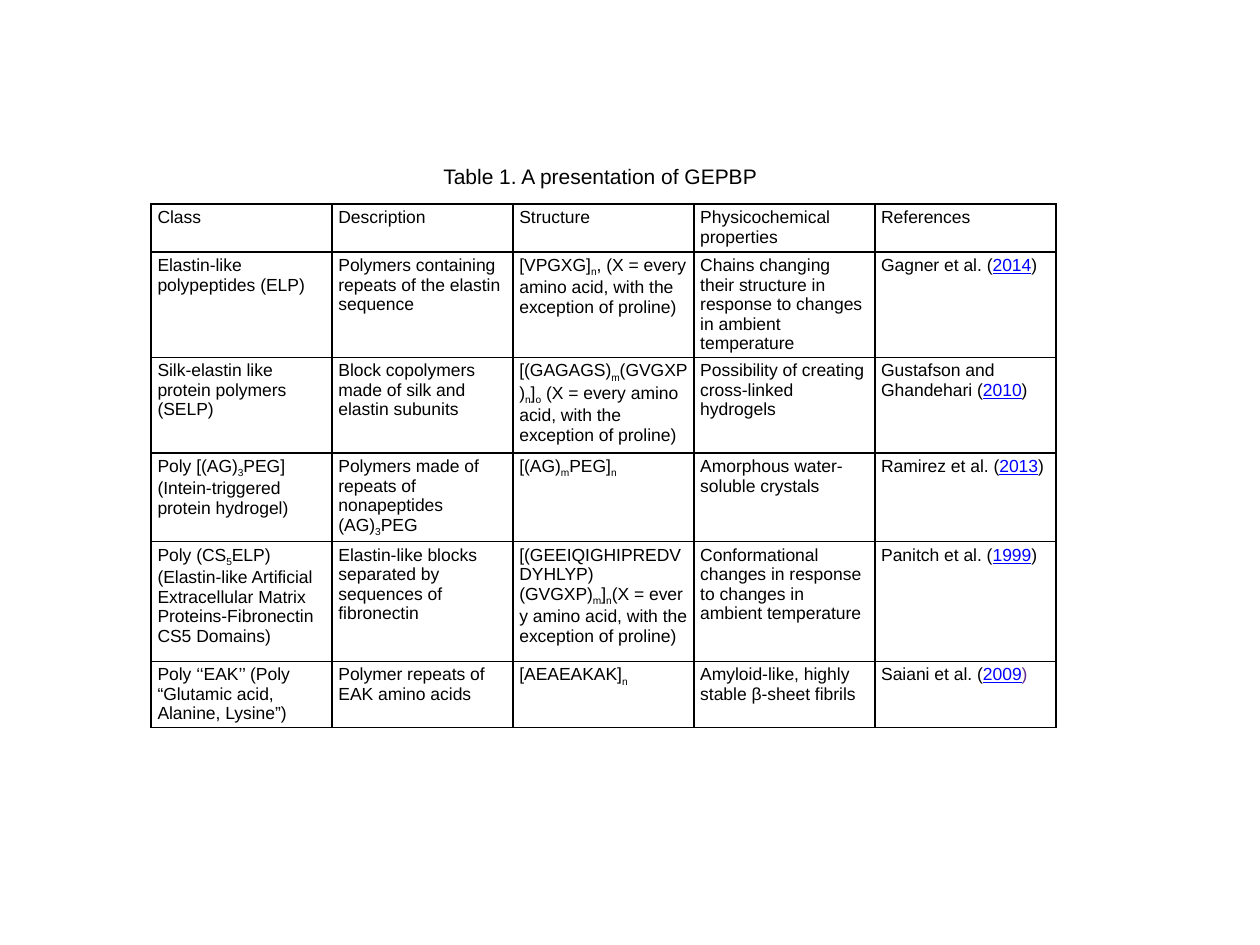
from lxml import etree
from pptx import Presentation
from pptx.dml.color import RGBColor
from pptx.enum.text import MSO_AUTO_SIZE
from pptx.oxml.ns import qn
from pptx.util import Inches, Pt

FIT_SHAPE = MSO_AUTO_SIZE.SHAPE_TO_FIT_TEXT
COLORS = {"text": "000000", "paper": "FFFFFF", "link": "0000FF", "visited": "642A8F"}
BLANK_LAYOUT = 6
BORDER_TAGS = ("a:lnL", "a:lnR", "a:lnT", "a:lnB")
CELL_FORMAT = {
    "margin_left": Inches(0.05),
    "margin_right": Inches(0.05),
    "margin_top": Inches(0.03),
    "margin_bottom": Inches(0.03),
}

# Pieces of a text are divided by "|"; the first character of a piece may set its style.
MARKS = {
    "~": {"subscript": True},
    "_": {"color": "link", "underline": True},
    "^": {"color": "visited"},
}

NBSP = chr(160)
ANY_ACID = f"(X{NBSP}={NBSP}every amino acid, with the exception of proline)"
ROW_HEIGHTS = [0.38, 0.74, 0.76, 0.63, 0.95, 0.4]
POLYMERS = [
    ["Class", "Description", "Structure", "Physicochemical properties", "References"],
    [
        "Elastin-like polypeptides (ELP)",
        "Polymers containing repeats of the elastin sequence",
        f"[VPGXG]|~n|, {ANY_ACID}",
        "Chains changing their structure in response to changes in ambient temperature",
        "Gagner et al. (|_2014|)",
    ],
    [
        "Silk-elastin like protein polymers (SELP)",
        "Block copolymers made of silk and elastin subunits",
        f"[(GAGAGS)|~m|(GVGXP)|~n|]|~o|{NBSP}{ANY_ACID}",
        "Possibility of creating cross-linked hydrogels",
        "Gustafson and Ghandehari (|_2010|)",
    ],
    [
        "Poly [(AG)|~3|PEG] (Intein-triggered protein hydrogel)",
        "Polymers made of repeats of nonapeptides (AG)|~3|PEG",
        "[(AG)|~m|PEG]|~n",
        "Amorphous water-soluble crystals",
        "Ramirez et al. (|_2013|)",
    ],
    [
        "Poly (CS|~5|ELP) (Elastin-like Artificial Extracellular Matrix "
        "Proteins-Fibronectin CS5 Domains)",
        "Elastin-like blocks separated by sequences of fibronectin",
        f"[(GEEIQIGHIPREDVDYHLYP)(GVGXP)|~m|]|~n|{ANY_ACID}",
        "Conformational changes in response to changes in ambient temperature",
        "Panitch et al. (|_1999|)",
    ],
    [
        "Poly ‘‘EAK’’ (Poly “Glutamic acid, Alanine, Lysine”)",
        "Polymer repeats of EAK amino acids",
        "[AEAEAKAK]|~n",
        "Amyloid-like, highly stable β-sheet fibrils",
        f"Saiani et al.{NBSP}(|_2009|^)",
    ],
]


class SlideBuilder:
    def __init__(self, slide, font_name="Arial"):
        self.slide = slide
        self.font_name = font_name

    def add_runs(self, paragraph, text, size):
        """Add the runs of a text, styled by the marks in it."""
        for piece in text.split("|"):
            style = MARKS.get(piece[0], {})
            run = paragraph.add_run()
            run.text = piece[1:] if style else piece
            font_format = {
                "name": self.font_name,
                "size": Pt(size),
                "underline": style.get("underline"),
            }
            for name, value in font_format.items():
                setattr(run.font, name, value)
            run.font.color.rgb = RGBColor.from_string(COLORS[style.get("color", "text")])
            if style.get("subscript"):
                run._r.get_or_add_rPr().set("baseline", "-25000")

    def add_title(self, text, left, top, width, height):
        shape = self.slide.shapes.add_textbox(
            Inches(left), Inches(top), Inches(width), Inches(height)
        )
        shape.text_frame.word_wrap = False
        shape.text_frame.auto_size = FIT_SHAPE
        self.add_runs(shape.text_frame.paragraphs[0], text, 12)

    def add_table(self, rows, left, top, width, row_heights):
        column_count = len(rows[0])
        table = self.slide.shapes.add_table(
            len(rows), column_count, Inches(left), Inches(top),
            Inches(width), Inches(sum(row_heights)),
        ).table
        for column in table.columns:
            column.width = Inches(width / column_count)
        for row, height, texts in zip(table.rows, row_heights, rows):
            row.height = Inches(height)
            for cell, text in zip(row.cells, texts):
                self.format_cell(cell)
                self.add_runs(cell.text_frame.paragraphs[0], text, 10)

    def format_cell(self, cell):
        for name, value in CELL_FORMAT.items():
            setattr(cell, name, value)
        properties = cell._tc.get_or_add_tcPr()
        for tag in BORDER_TAGS:
            line = etree.SubElement(properties, qn(tag), w=str(Pt(1)))
            fill = etree.SubElement(line, qn("a:solidFill"))
            etree.SubElement(fill, qn("a:srgbClr"), val=COLORS["text"])
        cell.fill.solid()
        cell.fill.fore_color.rgb = RGBColor.from_string(COLORS["paper"])


def main():
    presentation = Presentation()
    presentation.slide_width = Inches(10)
    presentation.slide_height = Inches(7.5)
    slide = presentation.slides.add_slide(presentation.slide_layouts[BLANK_LAYOUT])
    builder = SlideBuilder(slide)
    builder.add_table(POLYMERS, 1.2, 1.62, 7.18, ROW_HEIGHTS)
    builder.add_title("Table 1. A presentation of GEPBP", 3.42, 1.25, 2.72, 0.3)
    presentation.save("out.pptx")


if __name__ == "__main__":
    main()
